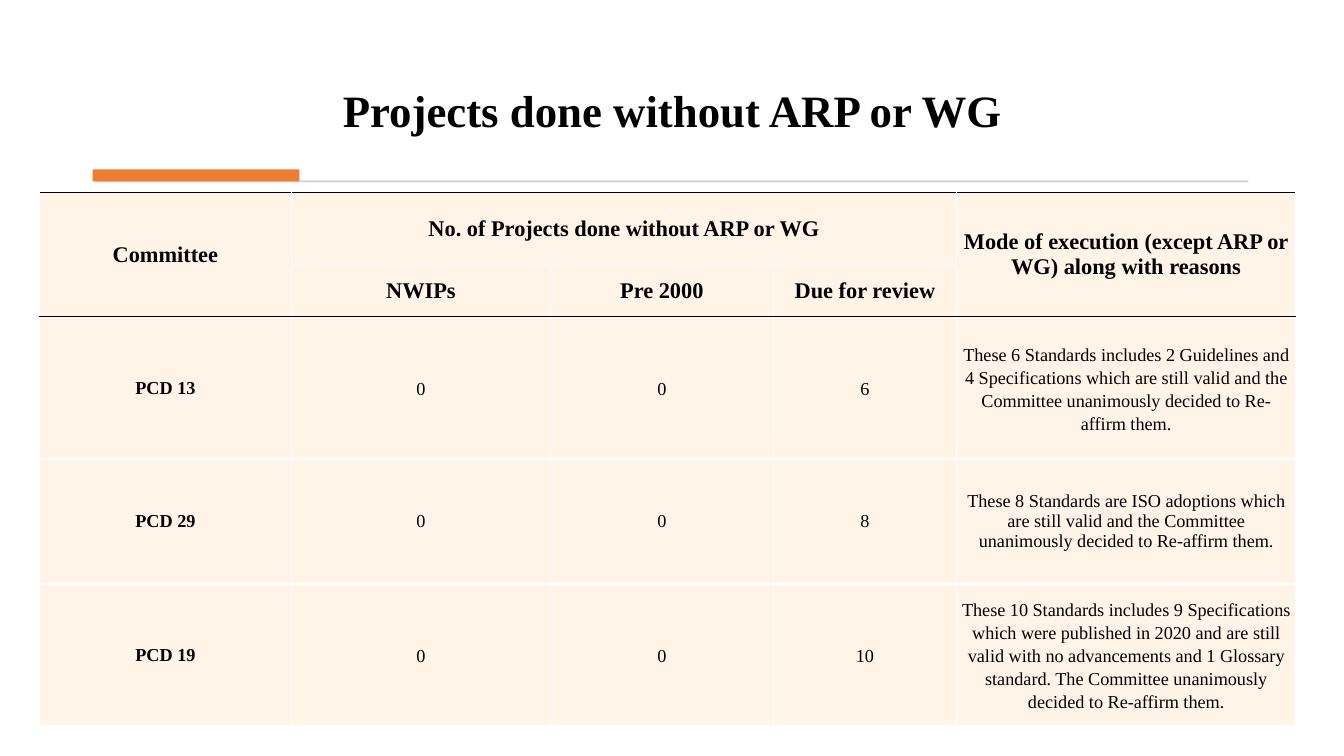
"""Build a slide with a titled table of projects done without ARP or WG."""
from dataclasses import dataclass

from lxml.etree import SubElement as Sub
from pptx import Presentation as Deck
from pptx.dml.color import RGBColor as Color
from pptx.enum.shapes import MSO_SHAPE as Shape
from pptx.enum.text import MSO_ANCHOR as Anchor, PP_ALIGN as Align
from pptx.oxml.ns import qn
from pptx.util import Inches, Pt

WIDE, HIGH = Inches(13.33), Inches(7.5)
BLACK = Color(0x00, 0x00, 0x00)
WHITE = Color(0xFF, 0xFF, 0xFF)
GREY = Color(0xD5, 0xD5, 0xD5)
ORANGE = Color(0xED, 0x7D, 0x31)
CREAM = Color(0xFF, 0xF4, 0xE7)
FONT = "Times New Roman"
COLS = (18.75, 19.28, 16.58, 13.65, 25.21)
ROWS = (9.6, 6.53, 18.8, 16.53, 18.8)
SPANS = (((0, 0), (1, 0)), ((0, 1), (0, 3)), ((0, 4), (1, 4)))
HEADS = (
    ("Committee", "No. of Projects done without ARP or WG", "", "",
     "Mode of execution (except ARP or WG) along with reasons"),
    ("", "NWIPs", "Pre 2000", "Due for review", ""),
)


@dataclass(frozen=True)
class Box:
    """Hold a frame in percent of the slide's width and height."""
    left: float
    top: float
    width: float
    height: float

    def frame(self) -> tuple[int, int, int, int]:
        """Return the frame as lengths."""
        return across(self.left), down(self.top), across(self.width), down(self.height)


@dataclass(frozen=True)
class Bar:
    """Hold a plain filled bar."""
    box: Box
    color: Color


@dataclass(frozen=True)
class Entry:
    """Hold one row of the table's body."""
    name: str
    new: int
    old: int
    due: int
    reason: str
    lead: float = 1.15


BARS = (
    Bar(Box(7.13, 23.87, 85.75, 0.27), GREY),
    Bar(Box(6.9, 22.4, 15.38, 1.6), ORANGE),
)
TITLE = Box(6.9, 5.33, 86.27, 19.33)
GRID = Box(2.93, 25.47, sum(COLS), sum(ROWS))
BODY = (
    Entry("PCD 13", 0, 0, 6,
          "These 6 Standards includes 2 Guidelines and 4 Specifications which are "
          "still valid and the Committee unanimously decided to Re-affirm them."),
    Entry("PCD 29", 0, 0, 8,
          "These 8 Standards are ISO adoptions which are still valid and the "
          "Committee unanimously decided to Re-affirm them.", lead=1.0),
    Entry("PCD 19", 0, 0, 10,
          "These 10 Standards includes 9 Specifications which were published in 2020 "
          "and are still valid with no advancements and 1 Glossary standard. The "
          "Committee unanimously decided to Re-affirm them."),
)


def across(share: float) -> int:
    """Turn a percent of the slide's width into a length."""
    return round(WIDE * share / 100)


def down(share: float) -> int:
    """Turn a percent of the slide's height into a length."""
    return round(HIGH * share / 100)


def write(frame, text: str, *, size: float, bold: bool = False, lead: float = 1.0) -> None:
    """Write one centred paragraph into a text frame."""
    frame.word_wrap = True
    para = frame.paragraphs[0]
    para.alignment = Align.CENTER
    para.line_spacing = lead
    run = para.add_run()
    run.text = text
    run.font.name, run.font.size, run.font.bold = FONT, Pt(size), bold
    run.font.color.rgb = BLACK


def edge(cell, top: Color, base: Color) -> None:
    """Draw the four borders of a cell."""
    props = cell._tc.get_or_add_tcPr()
    sides = (("L", WHITE), ("R", WHITE), ("T", top), ("B", base))
    for spot, (side, color) in enumerate(sides):
        line = Sub(props, qn(f"a:ln{side}"), w=str(Pt(1)))
        Sub(Sub(line, qn("a:solidFill")), qn("a:srgbClr"), val=str(color))
        props.insert(spot, line)


def draw_bar(slide, bar: Bar) -> None:
    """Draw a filled bar without outline."""
    shape = slide.shapes.add_shape(Shape.RECTANGLE, *bar.box.frame())
    shape.shadow.inherit = False
    shape.fill.solid()
    shape.fill.fore_color.rgb = bar.color
    shape.line.fill.background()


def draw_cell(cell, row: int, col: int, text: str, lead: float) -> None:
    """Fill, frame and letter one cell."""
    head = row < len(HEADS)
    cell.fill.solid()
    cell.fill.fore_color.rgb = CREAM
    cell.vertical_anchor = Anchor.MIDDLE
    cell.margin_left = cell.margin_right = Inches(0.02 if lead == 1 else 0.03)
    cell.margin_top = cell.margin_bottom = Inches(0.01 if lead == 1 else 0.02)
    last = row + (cell.span_height if cell.is_merge_origin else 1)
    edge(cell, BLACK if row in (0, len(HEADS)) else WHITE,
         BLACK if last == len(HEADS) else WHITE)
    if text:
        write(cell.text_frame, text, size=16 if head else 13,
              bold=head or col == 0, lead=lead)


def draw_table(slide) -> None:
    """Draw the table with its merged heads."""
    table = slide.shapes.add_table(len(ROWS), len(COLS), *GRID.frame()).table
    table.first_row = table.horz_banding = False
    for col, share in zip(table.columns, COLS):
        col.width = across(share)
    for row, share in zip(table.rows, ROWS):
        row.height = down(share)
    for start, end in SPANS:
        table.cell(*start).merge(table.cell(*end))
    lines = [(texts, 1.0) for texts in HEADS]
    lines += [((e.name, str(e.new), str(e.old), str(e.due), e.reason), e.lead) for e in BODY]
    for row, (texts, lead) in enumerate(lines):
        for col, text in enumerate(texts):
            draw_cell(table.cell(row, col), row, col, text, lead if col else 1.0)


def main() -> None:
    """Build and save the slide."""
    deck = Deck()
    deck.slide_width, deck.slide_height = WIDE, HIGH
    slide = deck.slides.add_slide(deck.slide_layouts[6])
    for bar in BARS:
        draw_bar(slide, bar)
    draw_table(slide)
    frame = slide.shapes.add_textbox(*TITLE.frame()).text_frame
    frame.vertical_anchor = Anchor.MIDDLE
    write(frame, "Projects done without ARP or WG", size=32, bold=True, lead=0.9)
    deck.save("out.pptx")


if __name__ == "__main__":
    main()
